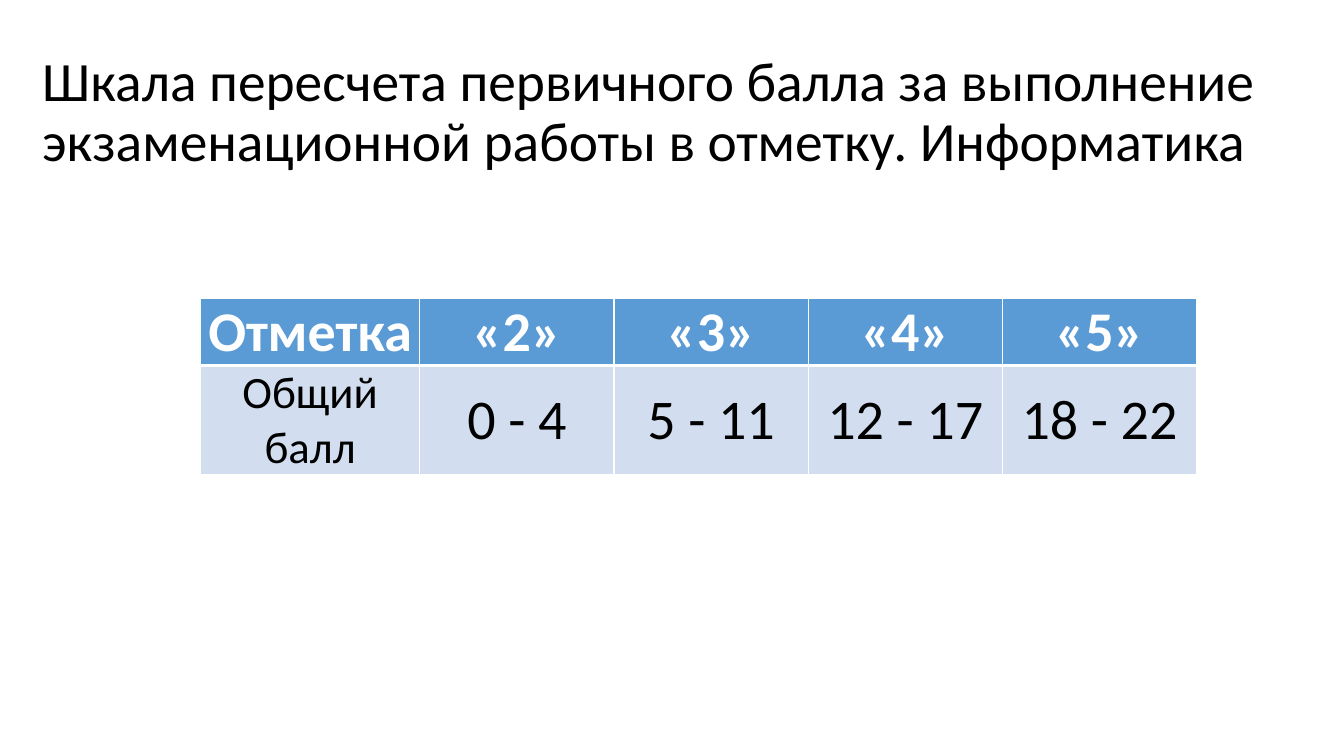
from pptx import Presentation
from pptx.dml.color import RGBColor
from pptx.enum.text import MSO_ANCHOR, PP_ALIGN
from pptx.oxml import parse_xml
from pptx.oxml.ns import nsdecls
from pptx.util import Inches, Pt

WIDE, HIGH = 13.33, 7.5
TITLE = "Шкала пересчета первичного балла за выполнение экзаменационной работы в отметку. Информатика"
GRADES = [
    ["Отметка", "«2»", "«3»", "«4»", "«5»"],
    ["Общий балл", "0 - 4", "5 - 11", "12 - 17", "18 - 22"],
]


def paint(color, value):
    color.rgb = RGBColor.from_string(value)


def style(para, size, color, bold=False):
    para.font.name = "Calibri"
    para.font.size = Pt(size)
    para.font.bold = bold
    paint(para.font.color, color)


def add_title(slide, box):
    frame = slide.shapes.add_textbox(*map(Inches, box)).text_frame
    frame.word_wrap = True
    frame.vertical_anchor = MSO_ANCHOR.MIDDLE
    para = frame.paragraphs[0]
    para.text = TITLE
    para.line_spacing = 0.9
    style(para, 39.6, "000000")


def add_edges(cell, head):
    widths = {"L": 1, "R": 1, "T": 1 if head else 3, "B": 3 if head else 1}
    props = cell._tc.get_or_add_tcPr()
    for spot, (side, width) in enumerate(widths.items()):
        props.insert(spot, parse_xml(
            f'<a:ln{side} {nsdecls("a")} w="{Pt(width)}"><a:solidFill>'
            f'<a:srgbClr val="FFFFFF"/></a:solidFill></a:ln{side}>'))


def fill_cell(cell, text, head, first):
    cell.text = text
    cell.margin_left = cell.margin_right = Inches(0.01)
    cell.margin_top = cell.margin_bottom = 0
    if not first:
        cell.vertical_anchor = MSO_ANCHOR.MIDDLE
    elif head:
        cell.vertical_anchor = MSO_ANCHOR.BOTTOM
    cell.fill.solid()
    paint(cell.fill.fore_color, "5B9BD5" if head else "D2DEEF")
    para = cell.text_frame.paragraphs[0]
    para.alignment = PP_ALIGN.CENTER
    style(para, 32 if first and not head else 40, "FFFFFF" if head else "000000", head)
    add_edges(cell, head)


def add_grades(slide, box):
    left, top, width, height = box
    count = len(GRADES[0])
    table = slide.shapes.add_table(len(GRADES), count, *map(Inches, box)).table
    lead = 0.22 * width
    for col, column in enumerate(table.columns):
        column.width = Inches(lead if col == 0 else (width - lead) / (count - 1))
    for row, share in zip(table.rows, (0.38, 0.62)):
        row.height = Inches(share * height)
    for row, texts in enumerate(GRADES):
        for col, text in enumerate(texts):
            fill_cell(table.cell(row, col), text, row == 0, col == 0)


def main():
    deck = Presentation()
    deck.slide_width, deck.slide_height = Inches(WIDE), Inches(HIGH)
    slide = deck.slides.add_slide(deck.slide_layouts[6])
    add_title(slide, (0.32, 0.4, 12.77, 1.45))
    add_grades(slide, (1.99, 2.96, 9.88, 1.75))
    deck.save("out.pptx")


if __name__ == "__main__":
    main()
